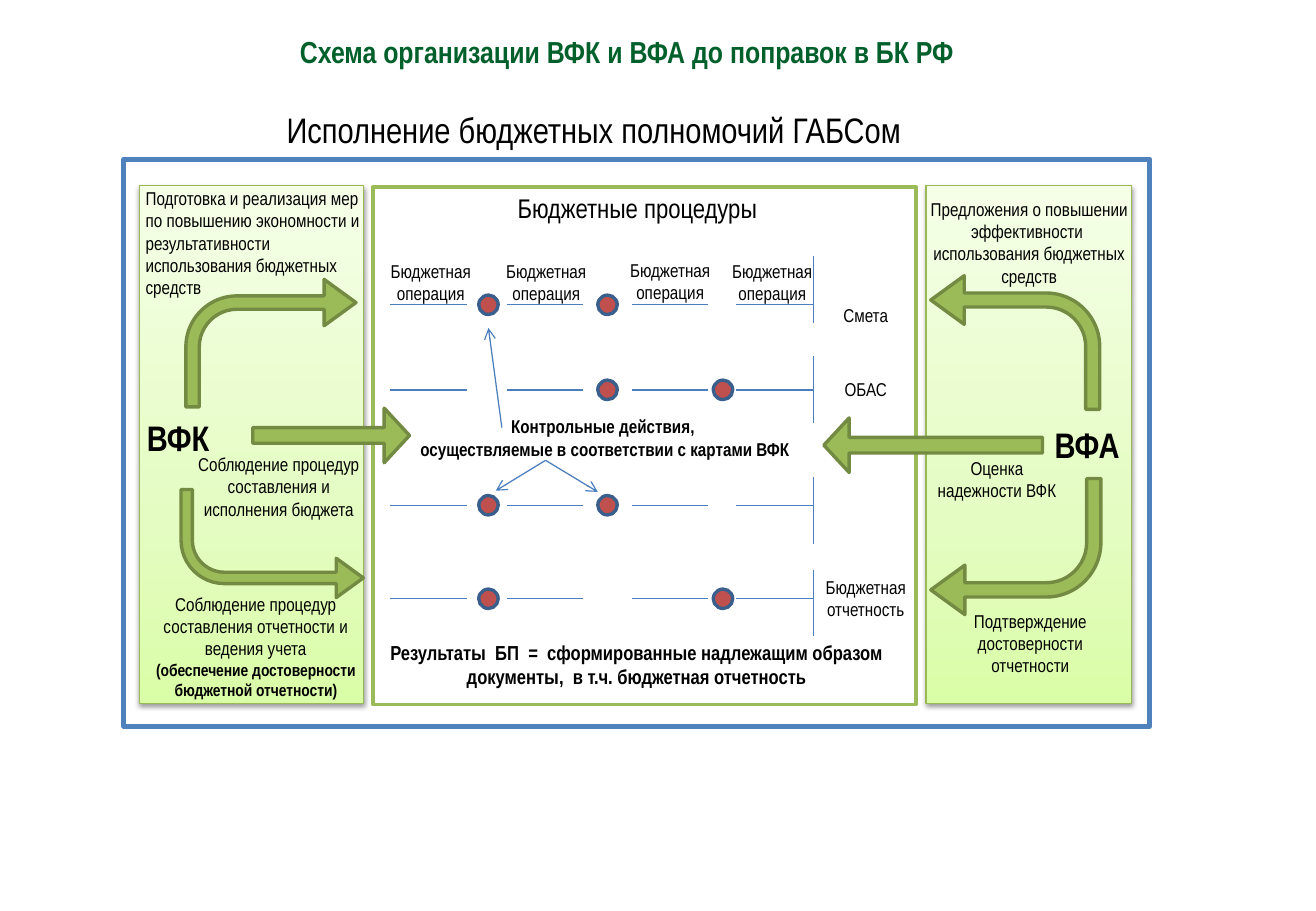
from dataclasses import dataclass

from pptx import Presentation
from pptx import util as u
from pptx.dml.color import RGBColor
from pptx.enum import shapes, text
from pptx.oxml import parse_xml
from pptx.oxml.ns import nsdecls, qn

# All lengths below are columns and rows of a square grid with this step.
CELL = u.Inches(0.1)
PAGE_COLUMNS, PAGE_ROWS = 108.3, 75
FONT = "Arial Narrow"

BLACK = RGBColor(0x00, 0x00, 0x00)
WHITE = RGBColor(0xFF, 0xFF, 0xFF)
TITLE_GREEN = RGBColor(0x00, 0x60, 0x2B)
FRAME_BLUE = RGBColor(0x4F, 0x81, 0xBD)
LINE_BLUE = RGBColor(0x4B, 0x7E, 0xBC)
DOT_RED = RGBColor(0xC0, 0x50, 0x4D)
DOT_EDGE = RGBColor(0x3A, 0x5F, 0x8C)
ARROW_GREEN = RGBColor(0x9B, 0xBB, 0x59)
ARROW_EDGE = RGBColor(0x73, 0x8A, 0x42)
PANEL_EDGE = RGBColor(0x98, 0xB9, 0x55)
PANEL_STOPS = (
    (0, RGBColor(0xDA, 0xFD, 0xA7)),
    (35, RGBColor(0xE4, 0xFC, 0xC2)),
    (100, RGBColor(0xF5, 0xFF, 0xE7)),
)

KIND = shapes.MSO_SHAPE
LEFT, CENTER = text.PP_ALIGN.LEFT, text.PP_ALIGN.CENTER


@dataclass(frozen=True)
class Area:
    column: float
    row: float
    columns: float
    rows: float

    def lengths(self) -> list[int]:
        return [cells(n) for n in (self.column, self.row, self.columns, self.rows)]


@dataclass(frozen=True)
class Span:
    words: str
    size: float = 11
    bold: bool = False
    color: RGBColor = BLACK


@dataclass(frozen=True)
class Label:
    area: Area
    paras: tuple[Span, ...]
    align: text.PP_ALIGN = CENTER
    wrap: bool = True
    inset: float = 1


@dataclass(frozen=True)
class BlockArrow:
    area: Area
    kind: shapes.MSO_SHAPE
    rotation: int = 0
    flipped: bool = False


ADJUSTMENTS = {
    KIND.BENT_ARROW: (0.105, 0.182, 0.25, 0.401),
    KIND.LEFT_ARROW: (0.286, 0.464),
}

OUTER_FRAME = Area(10.2, 13.1, 84.4, 46.7)
PROCEDURES = Area(30.7, 15.4, 44.7, 42.6)
PANELS = (Area(11.5, 15.3, 18.4, 42.6), Area(76.2, 15.3, 16.9, 42.6))

OPERATION_COLUMNS = (32.1, 41.7, 52, 60.6)
OPERATION_WIDTH = 6.3
PROCEDURE_ROWS = (25.1, 32.1, 41.6, 49.3)
DIVIDER_COLUMN, DIVIDER_ROWS, DIVIDER_HEIGHT = 66.95, (21.1, 29.3, 39.3, 46.9), 5.5
DOT_COLUMNS, DOT_SIZE = (40.2, 50, 59.5), 1.6
DOTS_BY_ROW = ((0, 1), (1, 2), (0, 1), (0, 2))

POINTERS = (
    (44.9, 37.9, 40.8, 40.4),
    (44.9, 37.9, 49.2, 40.5),
    (41.3, 35.2, 40.2, 27),
)

BLOCK_ARROWS = (
    BlockArrow(Area(15.3, 23, 14, 10.5), KIND.BENT_ARROW),
    BlockArrow(Area(14.9, 40.3, 15, 8.9), KIND.BENT_ARROW, flipped=True),
    BlockArrow(Area(20.8, 33.6, 12.9, 4.5), KIND.LEFT_ARROW, rotation=180),
    BlockArrow(Area(76.6, 22.7, 13.9, 11), KIND.BENT_ARROW, rotation=180, flipped=True),
    BlockArrow(Area(76.6, 39.4, 14, 11.2), KIND.BENT_ARROW, rotation=180),
    BlockArrow(Area(67.8, 34.4, 18, 4.5), KIND.LEFT_ARROW),
)

LABELS = (
    Label(Area(2, 2.1, 99.2, 4.2),
          (Span("Схема организации ВФК и ВФА до поправок в БК РФ", 18, True, TITLE_GREEN),),
          inset=1.2),
    Label(Area(22.6, 8.4, 55, 4.5),
          (Span("Исполнение бюджетных полномочий ГАБСом", 21),), LEFT, wrap=False),
    Label(Area(30.5, 15.3, 43.9, 3.7), (Span("Бюджетные процедуры", 16),)),
    *(Label(Area(column, row, 9.5, 4.7), (Span("Бюджетная операция"),))
      for column, row in ((30.7, 20.9), (40.2, 20.9), (50.4, 20.8), (58.8, 20.9))),
    Label(Area(33.1, 33.7, 33.4, 4.7),
          (Span("Контрольные действия, \nосуществляемые в соответствии с картами ВФК", bold=True),)),
    Label(Area(30.7, 52.2, 43.4, 5),
          (Span("Результаты  БП  =  сформированные надлежащим образом документы,  "
                "в т.ч. бюджетная отчетность", 12, True),)),
    Label(Area(67.6, 24.5, 7.3, 2.9), (Span("Смета"),)),
    Label(Area(67.6, 30.6, 7.3, 2.9), (Span("ОБАС"),)),
    Label(Area(66.7, 46.9, 9.1, 4.7), (Span("Бюджетная отчетность"),)),
    Label(Area(11.1, 33.8, 7.3, 4.5), (Span("ВФК", 21, True),), LEFT, wrap=False),
    Label(Area(11, 14.9, 20.4, 10.3),
          (Span("Подготовка и реализация мер по повышению экономности и "
                "результативности использования бюджетных средств"),), LEFT),
    Label(Area(14.3, 36.8, 17.3, 6.6),
          (Span("Соблюдение процедур составления и исполнения бюджета"),)),
    Label(Area(11.5, 48.3, 19.1, 9.9),
          (Span("Соблюдение процедур составления отчетности и ведения учета"),
           Span("(обеспечение достоверности бюджетной отчетности)", 10, True))),
    Label(Area(85.8, 34.3, 7.5, 4.5), (Span("ВФА", 21, True),), LEFT, wrap=False),
    Label(Area(74.3, 15.8, 20.8, 8.4),
          (Span("Предложения о повышении эффективности \nиспользования бюджетных средств"),)),
    Label(Area(76, 37.1, 12.1, 4.7), (Span("Оценка надежности ВФК"),)),
    Label(Area(75.6, 49.7, 18.4, 6.6),
          (Span("Подтверждение достоверности\nотчетности"),)),
)


def cells(count: float) -> int:
    return round(count * CELL)


def add_block(page, kind, area: Area, fill: RGBColor, edge: RGBColor, weight: float):
    shape = page.shapes.add_shape(kind, *area.lengths())
    shape.shadow.inherit = False
    shape.fill.solid()
    shape.fill.fore_color.rgb = fill
    shape.line.color.rgb = edge
    shape.line.width = u.Pt(weight)
    return shape


def add_panel(page, area: Area) -> None:
    """Side panel with an upward gradient and a soft shadow below."""
    panel = add_block(page, KIND.RECTANGLE, area, WHITE, PANEL_EDGE, 0.75)
    properties = panel._element.spPr
    stops = "".join(f'<a:gs pos="{share * 1000}"><a:srgbClr val="{color}"/></a:gs>'
                    for share, color in PANEL_STOPS)
    gradient = parse_xml(f'<a:gradFill {nsdecls("a")} rotWithShape="1"><a:gsLst>{stops}</a:gsLst>'
                         '<a:lin ang="16200000" scaled="0"/></a:gradFill>')
    properties.replace(properties.find(qn("a:solidFill")), gradient)
    properties.find(qn("a:effectLst")).append(parse_xml(
        f'<a:outerShdw {nsdecls("a")} blurRad="{u.Pt(3.1)}" dist="{u.Pt(1.6)}" dir="5400000" '
        'rotWithShape="0"><a:srgbClr val="000000"><a:alpha val="38000"/></a:srgbClr></a:outerShdw>'))


def add_line(page, x1: float, y1: float, x2: float, y2: float, arrow: bool = False) -> None:
    line = page.shapes.add_connector(shapes.MSO_CONNECTOR.STRAIGHT,
                                     *(cells(n) for n in (x1, y1, x2, y2)))
    line.line.color.rgb = LINE_BLUE
    line.line.width = u.Pt(0.75)
    if arrow:
        line.line._get_or_add_ln().append(parse_xml(f'<a:tailEnd {nsdecls("a")} type="arrow"/>'))
    line._element.spPr.append(parse_xml(f'<a:effectLst {nsdecls("a")}/>'))


def add_block_arrow(page, arrow: BlockArrow) -> None:
    shape = add_block(page, arrow.kind, arrow.area, ARROW_GREEN, ARROW_EDGE, 2)
    for index, value in enumerate(ADJUSTMENTS[arrow.kind]):
        shape.adjustments[index] = value
    shape.rotation = arrow.rotation
    if arrow.flipped:
        shape._element.spPr.find(qn("a:xfrm")).set("flipV", "1")


def add_label(page, label: Label) -> None:
    frame = page.shapes.add_textbox(*label.area.lengths()).text_frame
    frame.word_wrap = label.wrap
    frame.auto_size = text.MSO_AUTO_SIZE.SHAPE_TO_FIT_TEXT
    frame.margin_left = frame.margin_right = cells(label.inset)
    frame.margin_top = frame.margin_bottom = cells(label.inset / 2)
    for number, span in enumerate(label.paras):
        para = frame.add_paragraph() if number else frame.paragraphs[0]
        para.alignment = label.align
        for part, words in enumerate(span.words.split("\n")):
            if part:
                para.add_line_break()
            run = para.add_run()
            run.text = words
            run.font.name = FONT
            run.font.size = u.Pt(span.size)
            run.font.bold = span.bold
            run.font.color.rgb = span.color


def add_procedures(page) -> None:
    """Rows of operations, their dividers and the control points between them."""
    for row, top, dots in zip(PROCEDURE_ROWS, DIVIDER_ROWS, DOTS_BY_ROW):
        for column in OPERATION_COLUMNS:
            add_line(page, column, row, column + OPERATION_WIDTH, row)
        add_line(page, DIVIDER_COLUMN, top, DIVIDER_COLUMN, top + DIVIDER_HEIGHT)
        for dot in dots:
            area = Area(DOT_COLUMNS[dot] - DOT_SIZE / 2, row - DOT_SIZE / 2, DOT_SIZE, DOT_SIZE)
            add_block(page, KIND.FLOWCHART_CONNECTOR, area, DOT_RED, DOT_EDGE, 2)


def main() -> None:
    deck = Presentation()
    deck.slide_width, deck.slide_height = cells(PAGE_COLUMNS), cells(PAGE_ROWS)
    page = deck.slides.add_slide(deck.slide_layouts[6])
    add_block(page, KIND.RECTANGLE, OUTER_FRAME, WHITE, FRAME_BLUE, 3)
    add_block(page, KIND.RECTANGLE, PROCEDURES, WHITE, ARROW_GREEN, 2)
    for panel in PANELS:
        add_panel(page, panel)
    add_procedures(page)
    for pointer in POINTERS:
        add_line(page, *pointer, arrow=True)
    for arrow in BLOCK_ARROWS:
        add_block_arrow(page, arrow)
    for label in LABELS:
        add_label(page, label)
    deck.save("out.pptx")


if __name__ == "__main__":
    main()
